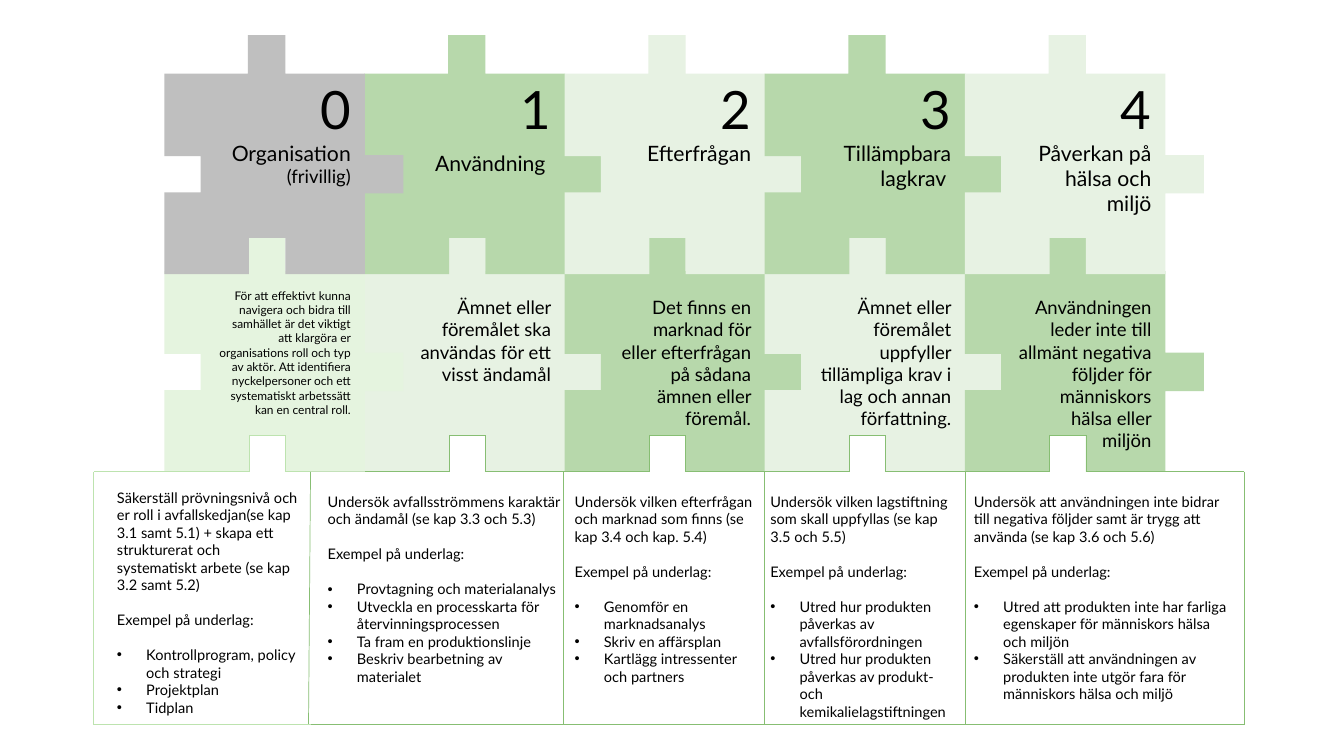
from dataclasses import dataclass

from lxml import etree
from pptx import Presentation, util as u
from pptx.dml.color import RGBColor
from pptx.enum import shapes, text
from pptx.oxml.ns import qn

FONT = "Lato"
BLACK, GRAY = "000000", "BFBFBF"
MID_GREEN, PALE_GREEN, MINT = "B7D8AB", "E7F2E3", "E5F4DF"
LINE_GREEN, LINE_MINT = "87BE73", "BDE3AF"

# Grid of puzzle pieces, in inches
LEFT, COLUMN_PITCH = 1.63, 1.985
TOP, ROW_PITCH = 0.35, 1.96
NOTCH_LEFT, NOTCH_RIGHT = 0.84, 1.2
BOX_TOP, BOX_BOTTOM, NOTCH_TOP = 4.68, 7.19, 4.32
BOX_EDGES = [0.93, 3.08, 5.59, 7.58, 9.57, 12.34]

# Outline of one piece, in hundredths of an inch
PIECE = [(83, 0), (120, 0), (120, 38), (199, 38), (199, 119), (237, 119), (237, 157),
         (199, 157), (199, 237), (120, 237), (120, 201), (84, 201), (84, 237), (0, 237),
         (0, 156), (36, 156), (36, 120), (0, 120), (0, 38), (83, 38)]


@dataclass
class Line:
    text: str
    size: float
    before: float = 0
    bullet: bool = False


@dataclass
class Step:
    heading: list[Line]
    heading_color: str
    reason: Line
    reason_color: str
    reason_inset: float
    box: tuple[float, float, float, float]
    task: str
    examples: list[str]


STEPS = [
    Step([Line("0", 37.7), Line("Organisation", 15.1), Line("(frivillig)", 13.2)], GRAY,
         Line("För att effektivt kunna navigera och bidra till samhället är det viktigt att "
              "klargöra er organisations roll och typ av aktör. Att identifiera nyckelpersoner "
              "och ett systematiskt arbetssätt kan en central roll.", 8.5), MINT, 0.55,
         (1.16, 4.85, 1.82, 2.09),
         "Säkerställ prövningsnivå och er roll i avfallskedjan(se kap 3.1 samt 5.1) + skapa "
         "ett strukturerat och systematiskt arbete (se kap 3.2 samt 5.2)",
         ["Kontrollprogram, policy och strategi", "Projektplan", "Tidplan"]),
    Step([Line("1", 37.7), Line("Användning ", 15.1, before=7.4)], MID_GREEN,
         Line("Ämnet eller föremålet ska användas för ett visst ändamål", 13.2),
         PALE_GREEN, 0.63, (3.25, 4.89, 2.37, 1.75),
         "Undersök avfallsströmmens karaktär och ändamål (se kap 3.3 och 5.3)",
         ["Provtagning och materialanalys",
          "Utveckla en processkarta för återvinningsprocessen",
          "Ta fram en produktionslinje", "Beskriv bearbetning av materialet"]),
    Step([Line("2", 37.7), Line("Efterfrågan", 15.1)], PALE_GREEN,
         Line("Det finns en marknad för eller efterfrågan på sådana ämnen eller föremål.", 13.2),
         MID_GREEN, 0.63, (5.7, 4.89, 1.82, 2.1),
         "Undersök vilken efterfrågan och marknad som finns (se kap 3.4 och kap. 5.4)",
         ["Genomför en marknadsanalys", "Skriv en affärsplan",
          "Kartlägg intressenter och partners"]),
    Step([Line("3", 37.7), Line("Tillämpbara lagkrav ", 15.1)], MID_GREEN,
         Line("Ämnet eller föremålet uppfyller tillämpliga krav i lag och annan författning.",
              13.2), PALE_GREEN, 0.63, (7.64, 4.89, 1.82, 2.1),
         "Undersök vilken lagstiftning som skall uppfyllas (se kap 3.5 och 5.5)",
         ["Utred hur produkten påverkas av avfallsförordningen",
          "Utred hur produkten påverkas av produkt- och kemikalielagstiftningen"]),
    Step([Line("4", 37.7), Line("Påverkan på hälsa och miljö", 15.1)], PALE_GREEN,
         Line("Användningen leder inte till allmänt negativa följder för människors hälsa "
              "eller miljön", 13.2), MID_GREEN, 0.63, (9.66, 4.89, 2.6, 2.1),
         "Undersök att användningen inte bidrar till negativa följder samt är trygg att "
         "använda (se kap 3.6 och 5.6)",
         ["Utred att produkten inte har farliga egenskaper för människors hälsa och miljön",
          "Säkerställ att användningen av produkten inte utgör fara för människors hälsa "
          "och miljö"]),
]


def color(value: str) -> RGBColor:
    return RGBColor.from_string(value)


def piece_left(column: int) -> float:
    return LEFT + column * COLUMN_PITCH


def write(frame, lines: list[Line], align, margins=(0, 0, 0, 0)) -> None:
    frame.word_wrap = True
    frame.vertical_anchor = text.MSO_ANCHOR.TOP
    (frame.margin_left, frame.margin_top,
     frame.margin_right, frame.margin_bottom) = map(u.Inches, margins)
    for index, line in enumerate(lines):
        paragraph = frame.add_paragraph() if index else frame.paragraphs[0]
        paragraph.text = line.text
        paragraph.alignment = align
        if line.before:
            paragraph.space_before = u.Pt(line.before)
        if line.bullet:
            properties = paragraph._p.get_or_add_pPr()
            properties.set("marL", str(u.Inches(0.29)))
            properties.set("indent", str(-u.Inches(0.29)))
            etree.SubElement(properties, qn("a:buFont"), typeface="Arial")
            etree.SubElement(properties, qn("a:buChar"), char="•")
        paragraph.font.name = FONT
        paragraph.font.size = u.Pt(line.size)
        paragraph.font.color.rgb = color(BLACK)


def add_piece(slide, column: int, row: int, fill: str, lines: list[Line], inset: float) -> None:
    builder = slide.shapes.build_freeform(*PIECE[0], scale=u.Inches(0.01))
    builder.add_line_segments(PIECE[1:], close=True)
    shape = builder.convert_to_shape(u.Inches(piece_left(column)),
                                     u.Inches(TOP + row * ROW_PITCH))
    shape.shadow.inherit = False
    shape.fill.solid()
    shape.fill.fore_color.rgb = color(fill)
    shape.line.fill.background()
    write(shape.text_frame, lines, text.PP_ALIGN.RIGHT, (0.52, inset, 0.52, 0.52))


def add_task_box(slide, step: Step) -> None:
    box = slide.shapes.add_textbox(*map(u.Inches, step.box))
    lines = [Line(step.task, 10.4), Line("Exempel på underlag:", 10.4, before=12.5)]
    lines += [Line(example, 10.4, before=0 if index else 12.5, bullet=True)
              for index, example in enumerate(step.examples)]
    write(box.text_frame, lines, text.PP_ALIGN.LEFT)


def add_line(slide, start: tuple[float, float], end: tuple[float, float], stroke: str) -> None:
    line = slide.shapes.add_connector(shapes.MSO_CONNECTOR.STRAIGHT,
                                      *map(u.Inches, (*start, *end)))
    line.line.color.rgb = color(stroke)
    line.line.width = u.Pt(0.5)
    etree.SubElement(line._element.spPr, qn("a:effectLst"))


def add_box_outline(slide, column: int, stroke: str) -> None:
    left, right = BOX_EDGES[column:column + 2]
    notch_left = piece_left(column) + NOTCH_LEFT
    notch_right = piece_left(column) + NOTCH_RIGHT
    foot = 3.06 if column == 1 else left
    points = [(foot, BOX_BOTTOM), (left, BOX_TOP), (notch_left, BOX_TOP),
              (notch_left, NOTCH_TOP), (notch_right, NOTCH_TOP),
              (notch_right, BOX_TOP), (right, BOX_TOP)]
    for start, end in zip(points, points[1:]):
        add_line(slide, start, end, stroke)


def add_pieces(slide, columns: range) -> None:
    for column in columns:
        step = STEPS[column]
        add_piece(slide, column, 1, step.reason_color, [step.reason], step.reason_inset)
    for column in columns:
        step = STEPS[column]
        add_piece(slide, column, 0, step.heading_color, step.heading, 0.41)


def main() -> None:
    presentation = Presentation()
    presentation.slide_width = u.Inches(13.33)
    presentation.slide_height = u.Inches(7.5)
    slide = presentation.slides.add_slide(presentation.slide_layouts[6])

    # Steps 1 to 4, then the voluntary step 0 on top
    for columns, stroke in ((range(1, 5), LINE_GREEN), (range(1), LINE_MINT)):
        add_pieces(slide, columns)
        for column in columns:
            add_task_box(slide, STEPS[column])
        for column in columns:
            add_box_outline(slide, column, stroke)
        # Bottom edge of the boxes
        add_line(slide, (BOX_EDGES[columns.start], BOX_BOTTOM),
                 (BOX_EDGES[columns.stop], BOX_BOTTOM), stroke)

    # Right edge of the last box
    add_line(slide, (BOX_EDGES[-1], BOX_TOP), (BOX_EDGES[-1], BOX_BOTTOM), LINE_GREEN)
    presentation.save("out.pptx")


if __name__ == "__main__":
    main()
